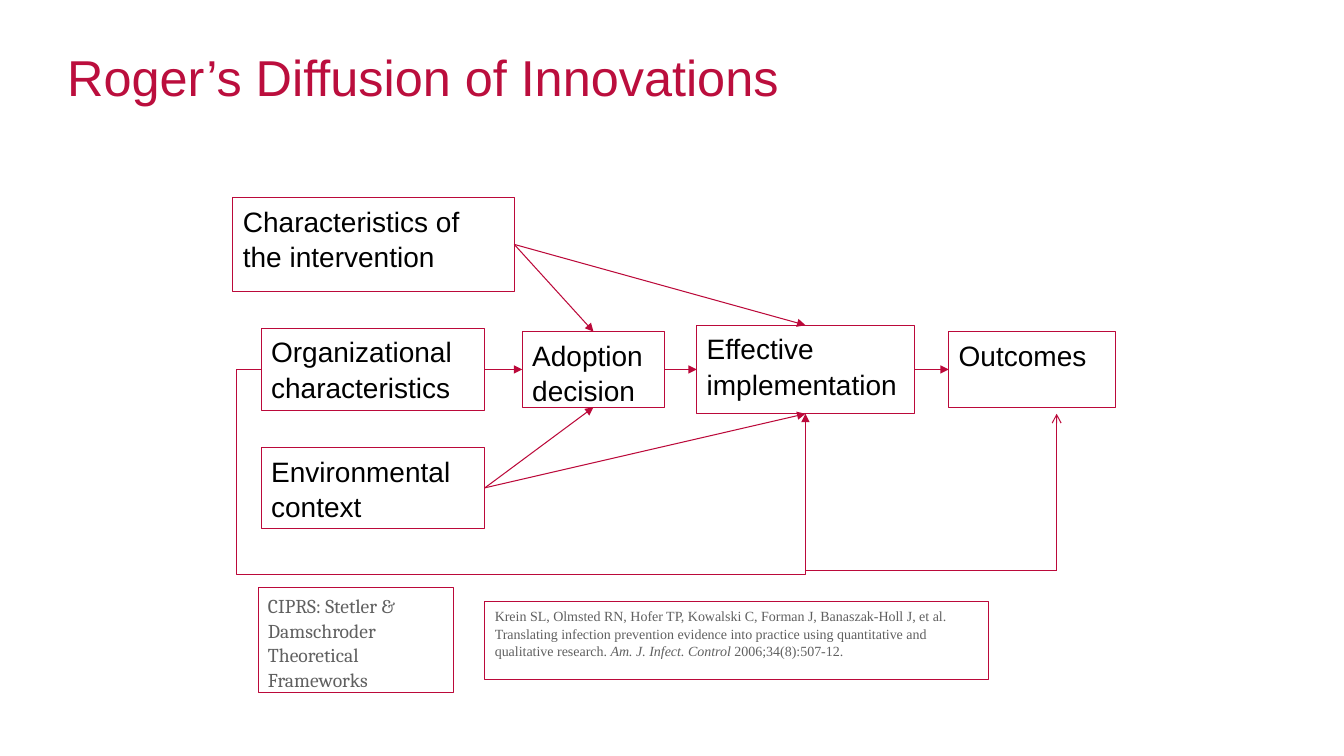
from dataclasses import dataclass
from lxml.etree import SubElement as Sub
from pptx import Presentation
from pptx.dml.color import RGBColor as Color
from pptx.enum.shapes import MSO_CONNECTOR as Link, MSO_SHAPE as Form
from pptx.enum.text import MSO_ANCHOR as Anchor, PP_ALIGN as Align
from pptx.oxml.ns import qn
from pptx.util import Inches, Pt

TOP, LEFT, BASE, RIGHT = range(4)


@dataclass(frozen=True)
class Theme:
    title: str = "BB0E3D"
    line: str = "BB093A"
    fill: str = "FFFFFF"
    ink: str = "000000"
    grey: str = "606060"
    head: float = 36
    body: float = 20
    note: float = 14
    cite: float = 10
    rule: float = 0.75
    lead: float = 1.05


class Board:
    def __init__(self, deck, theme):
        self.theme = theme
        self.wide, self.high = deck.slide_width, deck.slide_height
        self.items = deck.slides.add_slide(deck.slide_layouts[6]).shapes

    def col(self, share):
        return round(self.wide * share / 100)

    def row(self, share):
        return round(self.high * share / 100)

    def area(self, x, y, w, h):
        return self.col(x), self.row(y), self.col(w), self.row(h)

    def label(self, shape, parts, size, font, color):
        frame = shape.text_frame
        frame.word_wrap = True
        frame.vertical_anchor = Anchor.TOP
        para = frame.paragraphs[0]
        para.alignment = Align.LEFT
        para.line_spacing = self.theme.lead
        for text, slant in parts:
            run = para.add_run()
            run.text = text
            run.font.name, run.font.size = font, Pt(size)
            run.font.italic = slant
            run.font.color.rgb = Color.from_string(color)
        return frame

    def title(self, text, area):
        shape = self.items.add_textbox(*self.area(*area))
        theme = self.theme
        frame = self.label(shape, [(text, None)], theme.head, "Arial", theme.title)
        frame.margin_left = frame.margin_right = frame.margin_bottom = 0
        frame.margin_top = Inches(0.03)

    def frame(self, area):
        shape = self.items.add_shape(Form.RECTANGLE, *self.area(*area))
        shape.shadow.inherit = False
        shape.fill.background()
        self.stroke(shape)
        return shape

    def step(self, text, left, mid, wide, high):
        shape = self.frame((left, mid - high / 2, wide, high))
        shape.fill.solid()
        shape.fill.fore_color.rgb = Color.from_string(self.theme.fill)
        self.label(shape, [(text, None)], self.theme.body, "Arial", self.theme.ink)
        return shape

    def note(self, parts, area, size, font):
        self.label(self.frame(area), parts, size, font, self.theme.grey)

    def stroke(self, shape):
        shape.line.color.rgb = Color.from_string(self.theme.line)
        shape.line.width = Pt(self.theme.rule)

    def wire(self, kind, ends, tip):
        wire = self.items.add_connector(kind, *ends)
        self.stroke(wire)
        props = wire._element.spPr
        if tip:
            Sub(props.find(qn("a:ln")), qn("a:tailEnd"), type=tip)
        Sub(props, qn("a:effectLst"))
        return wire

    def line(self, start, end, tip=None):
        (x, y), (u, v) = start, end
        ends = self.col(x), self.row(y), self.col(u), self.row(v)
        self.wire(Link.STRAIGHT, ends, tip)

    def join(self, start, out, end, into, kind=Link.STRAIGHT):
        wire = self.wire(kind, (0, 0, 0, 0), "triangle")
        wire.begin_connect(start, out)
        wire.end_connect(end, into)
        return wire

    def loop(self, start, out, end, into, side, floor):
        wire = self.join(start, out, end, into, Link.ELBOW)
        across = (self.col(side) - wire.begin_x) / (wire.end_x - wire.begin_x)
        down = (self.row(floor) - wire.begin_y) / (wire.end_y - wire.begin_y)
        geom = wire._element.spPr.find(qn("a:prstGeom"))
        geom.set("prst", "bentConnector4")
        guides = geom.find(qn("a:avLst"))
        for name, share in (("adj1", across), ("adj2", down)):
            Sub(guides, qn("a:gd"), name=name, fmla=f"val {round(share * 100000)}")


def main():
    deck = Presentation()
    deck.slide_width, deck.slide_height = Inches(13.33), Inches(7.5)
    theme = Theme()
    board = Board(deck, theme)
    board.title("Roger’s Diffusion of Innovations", (5, 5.33, 90, 6.67))

    mid = 48.87
    traits = board.step("Characteristics of the intervention", 17.33, 32.33, 20.93, 12.4)
    firm = board.step("Organizational characteristics", 19.43, mid, 16.65, 10.93)
    world = board.step("Environmental context", 19.43, 64.53, 16.65, 10.67)
    adopt = board.step("Adoption decision", 38.86, mid, 10.6, 10)
    effect = board.step("Effective implementation", 51.84, mid, 16.17, 11.73)
    result = board.step("Outcomes", 70.59, mid, 12.4, 10)

    for cause, side in ((traits, TOP), (world, BASE)):
        for goal in (adopt, effect):
            board.join(cause, RIGHT, goal, side)
    chain = firm, adopt, effect, result
    for start, end in zip(chain, chain[1:]):
        board.join(start, RIGHT, end, LEFT)
    board.loop(firm, LEFT, effect, BASE, 17.55, 76)

    corner = 78.62, 75.47
    board.line((59.92, 75.47), corner)
    board.line(corner, (78.62, 54.73), "arrow")

    source = "CIPRS: Stetler & Damschroder Theoretical Frameworks"
    board.note([(source, None)], (19.2, 77.73, 14.55, 13.87), theme.note, "Cambria")
    paper = [
        ("Krein SL, Olmsted RN, Hofer TP, Kowalski C, Forman J, Banaszak-Holl J, et al. "
         "Translating infection prevention evidence into practice using quantitative "
         "and qualitative research. ", None),
        ("Am. J. Infect. Control", True),
        (" 2006;34(8):507-12.", None),
    ]
    board.note(paper, (36.08, 79.6, 37.51, 10.27), theme.cite, "Times New Roman")
    deck.save("out.pptx")


if __name__ == "__main__":
    main()
